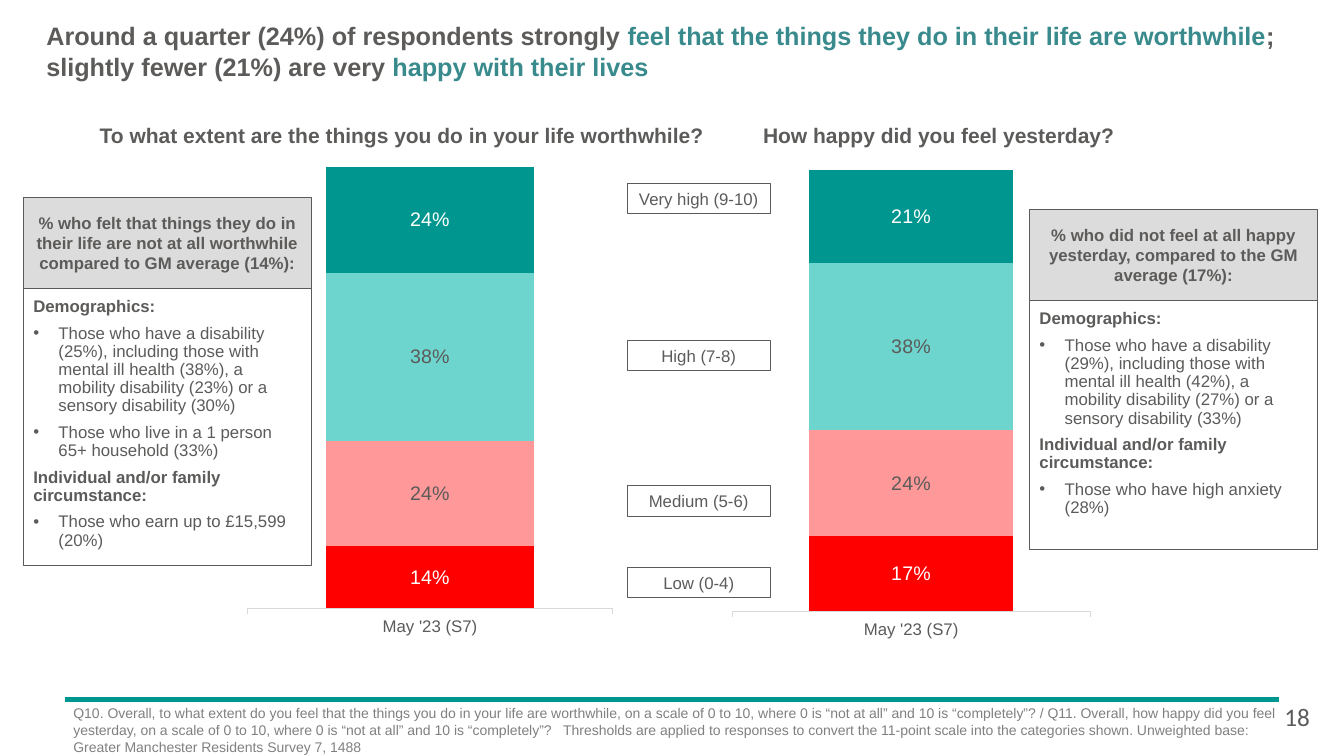
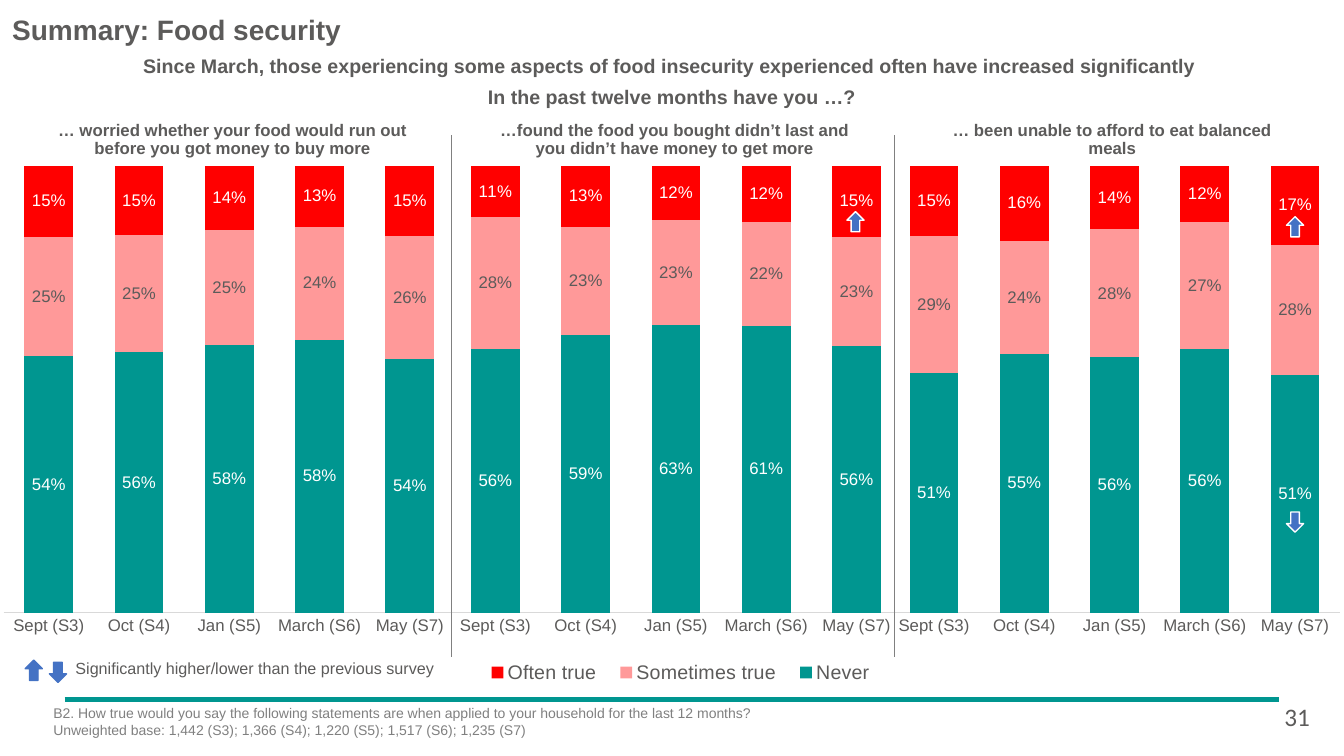
from dataclasses import dataclass

from lxml import etree
from pptx import Presentation
from pptx.chart.data import CategoryChartData
from pptx.dml.color import RGBColor
from pptx.enum.chart import XL_CHART_TYPE, XL_LEGEND_POSITION, XL_TICK_MARK
from pptx.enum.shapes import MSO_CONNECTOR, MSO_SHAPE
from pptx.enum.text import MSO_ANCHOR, MSO_AUTO_SIZE, PP_ALIGN
from pptx.oxml import parse_xml
from pptx.oxml.ns import nsdecls, qn
from pptx.util import Inches, Pt

STACKED = XL_CHART_TYPE.COLUMN_STACKED_100
LEFT, CENTRE = PP_ALIGN.LEFT, PP_ALIGN.CENTER
TOP, MIDDLE = MSO_ANCHOR.TOP, MSO_ANCHOR.MIDDLE
UP, DOWN = MSO_SHAPE.UP_ARROW, MSO_SHAPE.DOWN_ARROW
TICK_OUT, TICK_NONE = XL_TICK_MARK.OUTSIDE, XL_TICK_MARK.NONE
TITLE_ONLY, TWO_CONTENT = 5, 3


@dataclass(frozen=True)
class Theme:
    font: str = "Arial"
    number_font: str = "Calibri"
    ink: str = "5C5B5A"
    accent: str = "388A8C"
    teal: str = "009690"
    aqua: str = "6DD5CE"
    pink: str = "FF9999"
    red: str = "FF0000"
    blue: str = "4472C4"
    grey: str = "808080"
    pale: str = "DCDCDC"
    axis: str = "D9D9D9"
    white: str = "FFFFFF"
    heading: float = 20
    title: float = 18
    question: float = 15
    lead: float = 14
    body: float = 12
    key: float = 11.5
    note: float = 10


THEME = Theme()


@dataclass(frozen=True)
class Box:
    """Left, top, width and height in the columns and rows of a one-inch grid."""
    left: float
    top: float
    width: float
    height: float

    def emu(self) -> tuple:
        return tuple(Inches(n) for n in (self.left, self.top, self.width, self.height))


@dataclass(frozen=True)
class Words:
    text: str
    color: str = THEME.ink
    bold: bool = False
    size: float = THEME.body
    font: str = THEME.font


@dataclass(frozen=True)
class Series:
    name: str
    values: tuple
    color: str
    label_color: str = THEME.white


@dataclass(frozen=True)
class Panel:
    """A shaded heading above a list; list lines starting with a bullet are items."""
    left: float
    top: float
    list_height: float
    heading: str
    lines: tuple


@dataclass(frozen=True)
class FoodChart:
    left: float
    title: str
    title_share: float
    never: tuple
    sometimes: tuple
    often: tuple


LEVELS = (("Low (0-4)", 5.63, THEME.red, THEME.white),
          ("Medium (5-6)", 4.82, THEME.pink, THEME.ink),
          ("High (7-8)", 3.38, THEME.aqua, THEME.ink),
          ("Very high (9-10)", 1.82, THEME.teal, THEME.white))
WELLBEING = ((Box(2.08, 1.52, 4.67, 5.25), (0.14, 0.24, 0.38, 0.24)),
             (Box(6.89, 1.55, 4.59, 5.25), (0.17, 0.24, 0.38, 0.21)))
QUESTIONS = (("To what extent are the things you do in your life worthwhile?", Box(0.8, 1.17, 6.37, 0.35)),
             ("How happy did you feel yesterday?", Box(7.45, 1.17, 3.72, 0.35)))
PANELS = (
    Panel(0.23, 1.96, 2.75,
          "% who felt that things they do in their life are not at all worthwhile compared to GM average (14%):",
          ("Demographics:",
           "•Those who have a disability (25%), including those with mental ill health (38%), "
           "a mobility disability (23%) or a sensory disability (30%)",
           "•Those who live in a 1 person 65+ household (33%)",
           "Individual and/or family circumstance:",
           "•Those who earn up to £15,599 (20%)")),
    Panel(10.21, 2.08, 2.47,
          "% who did not feel at all happy yesterday, compared to the GM average (17%):",
          ("Demographics:",
           "•Those who have a disability (29%), including those with mental ill health (42%), "
           "a mobility disability (27%) or a sensory disability (33%)",
           "Individual and/or family circumstance:",
           "•Those who have high anxiety (28%)")))
SURVEYS = ("Sept (S3)", "Oct (S4)", "Jan (S5)", "March (S6)", "May (S7)")
FOOD_CHARTS = (
    FoodChart(0, "… worried whether your food would run out before you got money to buy more", 0.12,
              (0.54, 0.56, 0.58, 0.58, 0.54), (0.25, 0.25, 0.25, 0.24, 0.26), (0.15, 0.15, 0.14, 0.13, 0.15)),
    FoodChart(4.43, "…found the food you bought didn’t last and you didn’t have money to get more", 0.11,
              (0.56, 0.59, 0.63, 0.61, 0.56), (0.28, 0.23, 0.23, 0.22, 0.23), (0.11, 0.13, 0.12, 0.12, 0.15)),
    FoodChart(8.78, "… been unable to afford to eat balanced meals", 0.14,
              (0.51, 0.55, 0.56, 0.56, 0.51), (0.29, 0.24, 0.28, 0.27, 0.28), (0.15, 0.16, 0.14, 0.12, 0.17)))
ARROWS = ((UP, 0.25, 6.55, THEME.blue), (DOWN, 0.49, 6.57, THEME.blue), (UP, 8.4, 2.1, THEME.white),
          (UP, 12.76, 2.15, THEME.white), (DOWN, 12.76, 5.08, THEME.white))


def rgb(color: str) -> RGBColor:
    return RGBColor.from_string(color)


def style_font(font, size: float, color: str, bold: bool = False, name: str = THEME.font) -> None:
    font.size, font.bold, font.name = Pt(size), bold, name
    font.color.rgb = rgb(color)


def write(shape, paragraphs, align=LEFT, anchor=TOP, inset=None, wrap=True, spacing=None):
    """Fill a shape with paragraphs, each a sequence of Words, and return the paragraphs made."""
    frame = shape.text_frame
    frame.word_wrap, frame.auto_size, frame.vertical_anchor = wrap, MSO_AUTO_SIZE.NONE, anchor
    if inset is not None:
        frame.margin_left = frame.margin_right = frame.margin_top = frame.margin_bottom = Inches(inset)
    for index, runs in enumerate(paragraphs):
        paragraph = frame.add_paragraph() if index else frame.paragraphs[0]
        paragraph.alignment, paragraph.line_spacing = align, spacing
        for words in runs:
            run = paragraph.add_run()
            run.text = words.text
            style_font(run.font, words.size, words.color, words.bold, words.font)
    return frame.paragraphs


def add_text(slide, box: Box, *lines: Words, **layout) -> None:
    write(slide.shapes.add_textbox(*box.emu()), [[line] for line in lines], **layout)


def add_line(slide, start: tuple, end: tuple, color: str, weight: float) -> None:
    points = (Inches(n) for n in start + end)
    line = slide.shapes.add_connector(MSO_CONNECTOR.STRAIGHT, *points)
    line.line.color.rgb, line.line.width = rgb(color), Pt(weight)
    etree.SubElement(line._element.spPr, qn("a:effectLst"))


def paint(shape, fill, line: str, weight: float = 0.75) -> None:
    if fill is None:
        shape.fill.background()
    else:
        shape.fill.solid()
        shape.fill.fore_color.rgb = rgb(fill)
    shape.line.color.rgb, shape.line.width = rgb(line), Pt(weight)


def add_shape(slide, kind, box: Box, fill, line: str, weight: float = 0.75):
    shape = slide.shapes.add_shape(kind, *box.emu())
    shape.shadow.inherit = False
    paint(shape, fill, line, weight)
    return shape


def move(shape, box: Box) -> None:
    shape.left, shape.top, shape.width, shape.height = box.emu()


def start_slide(presentation, layout: int, title_box: Box, title, note_box: Box, notes, number: str):
    """Add a slide with its title, footer rule, footnote and page number."""
    slide = presentation.slides.add_slide(presentation.slide_layouts[layout])
    move(slide.shapes.title, title_box)
    write(slide.shapes.title, [title], anchor=MIDDLE, inset=0)
    add_line(slide, (0.64, 6.94), (12.69, 6.94), THEME.teal, 3)
    add_text(slide, note_box, *(Words(note, THEME.grey, size=THEME.note) for note in notes))
    add_text(slide, Box(12.64, 6.91, 0.53, 0.4), Words(number, size=THEME.title, font=THEME.number_font))
    return slide


def add_panel(slide, panel: Panel, placeholder) -> None:
    width, heading_height = 2.86, 0.9
    heading = add_shape(slide, MSO_SHAPE.RECTANGLE, Box(panel.left, panel.top, width, heading_height),
                        THEME.pale, THEME.ink)
    write(heading, [[Words(panel.heading, bold=True)]], CENTRE, MIDDLE)[0].space_after = Pt(4)
    move(placeholder, Box(panel.left, panel.top + heading_height, width, panel.list_height))
    paint(placeholder, THEME.white, THEME.ink)
    runs = [[Words(line.lstrip("•"), bold=not line.startswith("•"))] for line in panel.lines]
    for line, paragraph in zip(panel.lines, write(placeholder, runs, inset=0.1, spacing=0.9)):
        paragraph.space_before = paragraph.space_after = Pt(3)
        properties = paragraph._p.get_or_add_pPr()
        indent = Inches(0.25) if line.startswith("•") else 0
        properties.set("marL", str(indent))
        properties.set("indent", str(-indent))
        if indent:
            etree.SubElement(properties, qn("a:buChar")).set("char", "•")
        else:
            etree.SubElement(properties, qn("a:buNone"))


def set_layout(parent, index: int, inner: bool = False, **shares: float) -> None:
    """Place a chart part by shares (x, y, w, h) of the chart's size."""
    for old in parent.findall(qn("c:layout")):
        parent.remove(old)
    target = '<c:layoutTarget val="inner"/>' if inner else ""
    modes = "".join(f'<c:{side}Mode val="edge"/>' for side in "xy")
    values = "".join(f'<c:{side} val="{share}"/>' for side, share in shares.items())
    parent.insert(index, parse_xml(f'<c:layout {nsdecls("c")}><c:manualLayout>{target}{modes}{values}'
                                   "</c:manualLayout></c:layout>"))


def add_stacked_chart(slide, box: Box, categories, series: list, gap: int, label_size: float, tick, plot: dict):
    data = CategoryChartData(number_format="0%")
    data.categories = categories
    for item in series:
        data.add_series(item.name, item.values)
    chart = slide.shapes.add_chart(STACKED, *box.emu(), data).chart
    chart.has_title = chart.has_legend = False
    style_font(chart.font, THEME.body, THEME.ink)
    bars = chart.plots[0]
    bars.gap_width, bars.overlap, bars.vary_by_categories = gap, 100, False
    for item, drawn in zip(series, bars.series):
        drawn.format.fill.solid()
        drawn.format.fill.fore_color.rgb = rgb(item.color)
        labels = drawn.data_labels
        labels.show_value, labels.number_format, labels.number_format_is_linked = True, "0%", False
        style_font(labels.font, label_size, item.label_color)
    chart.value_axis.visible = chart.value_axis.has_major_gridlines = False
    axis = chart.category_axis
    axis.major_tick_mark = tick
    axis.format.line.color.rgb, axis.format.line.width = rgb(THEME.axis), Pt(0.75)
    style_font(axis.tick_labels.font, THEME.body, THEME.ink)
    root = chart._chartSpace
    set_layout(root.chart.plotArea, 0, True, **plot)
    root.chart.addnext(parse_xml(f'<c:spPr {nsdecls("c", "a")}><a:noFill/><a:ln><a:noFill/></a:ln></c:spPr>'))
    return chart


def build_wellbeing(presentation) -> None:
    title = [Words(text, color, True, THEME.title) for text, color in (
        ("Around a quarter (24%) of respondents strongly ", THEME.ink),
        ("feel that the things they do in their life are worthwhile", THEME.accent),
        ("; slightly fewer (21%) are very ", THEME.ink),
        ("happy with their lives", THEME.accent))]
    note = ("Q10. Overall, to what extent do you feel that the things you do in your life are worthwhile, on a scale "
            "of 0 to 10, where 0 is “not at all” and 10 is “completely”? / Q11. Overall, how happy did you feel "
            "yesterday, on a scale of 0 to 10, where 0 is “not at all” and 10 is “completely”?   Thresholds are "
            "applied to responses to convert the 11-point scale into the categories shown. Unweighted base: "
            "Greater Manchester Residents Survey 7, 1488")
    slide = start_slide(presentation, TWO_CONTENT, Box(0.46, 0.2, 12.34, 0.61), title,
                        Box(0.63, 6.94, 12.23, 0.56), [note], "18")
    for question, box in QUESTIONS:
        add_text(slide, box, Words(question, bold=True, size=THEME.question), align=CENTRE, wrap=False)
    for name, top, _, _ in LEVELS:
        label = add_shape(slide, MSO_SHAPE.RECTANGLE, Box(6.22, top, 1.42, 0.3), None, THEME.ink)
        write(label, [[Words(name)]], CENTRE, MIDDLE)
    for box, shares in WELLBEING:
        series = [Series(name, (share,), color, ink) for (name, _, color, ink), share in zip(LEVELS, shares)]
        add_stacked_chart(slide, box, ("May '23 (S7)",), series, 75, THEME.lead, TICK_OUT,
                          dict(x=0.081, y=0.026, w=0.774, h=0.834))
    for panel, index in zip(PANELS, (1, 2)):
        add_panel(slide, panel, slide.placeholders[index])


def build_food_security(presentation) -> None:
    notes = ("B2. How true would you say the following statements are when applied to your household for the last "
             "12 months?", "Unweighted base: 1,442 (S3); 1,366 (S4); 1,220 (S5); 1,517 (S6); 1,235 (S7)")
    slide = start_slide(presentation, TITLE_ONLY, Box(0.12, 0.12, 11.5, 0.34),
                        [Words("Summary: Food security", bold=True, size=THEME.heading)],
                        Box(0.43, 6.94, 11.98, 0.56), notes, "31")
    for box, text in ((Box(0.18, 0.56, 12.98, 0.21), "Since March, those experiencing some aspects of food "
                       "insecurity experienced often have increased significantly "),
                      (Box(3.29, 0.87, 6.75, 0.21), "In the past twelve months have you …?")):
        add_text(slide, box, Words(text, bold=True, size=THEME.lead), align=CENTRE, inset=0, spacing=0.9)
    for index, food in enumerate(FOOD_CHARTS):
        series = [Series("Never", food.never, THEME.teal),
                  Series("Sometimes true", food.sometimes, THEME.pink, THEME.ink),
                  Series("Often true", food.often, THEME.red)]
        chart = add_stacked_chart(slide, Box(food.left, 0.92, 4.55, 5.93), SURVEYS, series, 85, THEME.body,
                                  TICK_NONE, dict(x=0.008, y=0.122, w=0.984, h=0.748))
        run = chart.chart_title.text_frame.paragraphs[0].add_run()
        run.text = food.title
        style_font(run.font, THEME.body, THEME.ink, True)
        set_layout(chart.chart_title._element, 1, x=food.title_share, y=0.04)
        if index == 1:
            chart.has_legend = True
            chart.legend.position, chart.legend.include_in_layout = XL_LEGEND_POSITION.LEFT, False
            style_font(chart.legend.font, THEME.lead, THEME.ink)
            set_layout(chart.legend._element, 1, x=0.06, y=0.94, w=0.9, h=0.06)
    for x in (4.48, 8.87):
        add_line(slide, (x, 1.34), (x, 6.52), THEME.grey, 0.5)
    for kind, left, top, outline in ARROWS:
        add_shape(slide, kind, Box(left, top, 0.17, 0.2), THEME.blue, outline, 1)
    add_text(slide, Box(0.65, 6.48, 3.79, 0.29),
             Words("Significantly higher/lower than the previous survey", size=THEME.key), wrap=False)


def main() -> None:
    presentation = Presentation()
    presentation.slide_width, presentation.slide_height = Inches(13.33), Inches(7.5)
    build_wellbeing(presentation)
    build_food_security(presentation)
    presentation.save("out.pptx")


if __name__ == "__main__":
    main()
